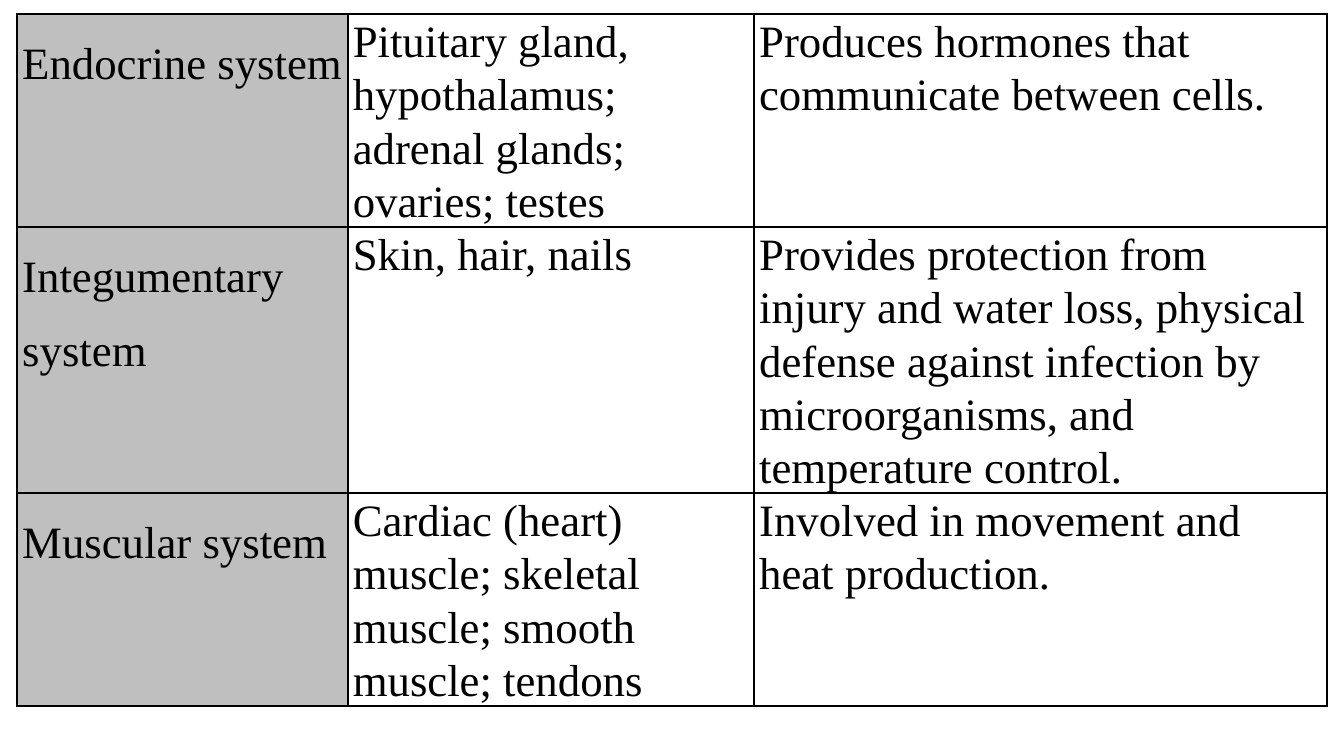
from dataclasses import dataclass

from lxml import etree
from pptx import Presentation
from pptx import util as u
from pptx.dml.color import RGBColor
from pptx.oxml import ns


@dataclass
class Theme:
    font: str = "Times New Roman"
    size: float = 32
    ink: str = "000000"
    head: str = "BFBFBF"
    rule: float = 1.5


class Deck:
    def __init__(self, theme):
        self.theme = theme
        self.prs = Presentation()
        self.prs.slide_width = u.Cm(33.87)
        self.prs.slide_height = u.Cm(19.05)
        self.slide = self.prs.slides.add_slide(self.prs.slide_layouts[6])

    def border(self, cell):
        props = cell._tc.get_or_add_tcPr()
        for i, side in enumerate("LRTB"):
            line = etree.Element(ns.qn(f"a:ln{side}"), w=str(u.Pt(self.theme.rule)))
            fill = etree.SubElement(line, ns.qn("a:solidFill"))
            etree.SubElement(fill, ns.qn("a:srgbClr"), val=self.theme.ink)
            props.insert(i, line)

    def cell(self, cell, words, head):
        cell.margin_left = cell.margin_right = u.Cm(0.13)
        cell.margin_top = cell.margin_bottom = 0
        if head:
            cell.fill.solid()
            cell.fill.fore_color.rgb = RGBColor.from_string(self.theme.head)
        else:
            cell.fill.background()
        self.border(cell)
        cell.text_frame.text = words
        for para in cell.text_frame.paragraphs:
            para.line_spacing = 1.5 if head else 1.07
            for run in para.runs:
                run.font.name = self.theme.font
                run.font.size = u.Pt(self.theme.size)
                run.font.color.rgb = RGBColor.from_string(self.theme.ink)

    def table(self, left, top, widths, heights, rows):
        frame = self.slide.shapes.add_table(
            len(rows), len(widths), u.Cm(left), u.Cm(top),
            u.Cm(sum(widths)), u.Cm(sum(heights)))
        grid = frame.table
        grid.first_row = grid.horz_banding = False
        for col, width in zip(grid.columns, widths):
            col.width = u.Cm(width)
        for row, height, texts in zip(grid.rows, heights, rows):
            row.height = u.Cm(height)
            for i, words in enumerate(texts):
                self.cell(row.cells[i], words, head=i == 0)


# Body systems: name, organs, function
SYSTEMS = [
    ("Endocrine system",
     "Pituitary gland, hypothalamus; adrenal glands; ovaries; testes",
     "Produces hormones that communicate between cells."),
    ("Integumentary\nsystem",
     "Skin, hair, nails",
     "Provides protection from injury and water loss, physical defense "
     "against infection by microorganisms, and temperature control."),
    ("Muscular system",
     "Cardiac (heart) muscle; skeletal muscle; smooth muscle; tendons",
     "Involved in movement and heat production."),
]


def main():
    deck = Deck(Theme())
    deck.table(0.43, 0.36, [8.33, 10.24, 14.45], [5.36, 6.7, 5.36], SYSTEMS)
    deck.prs.save("out.pptx")


if __name__ == "__main__":
    main()
